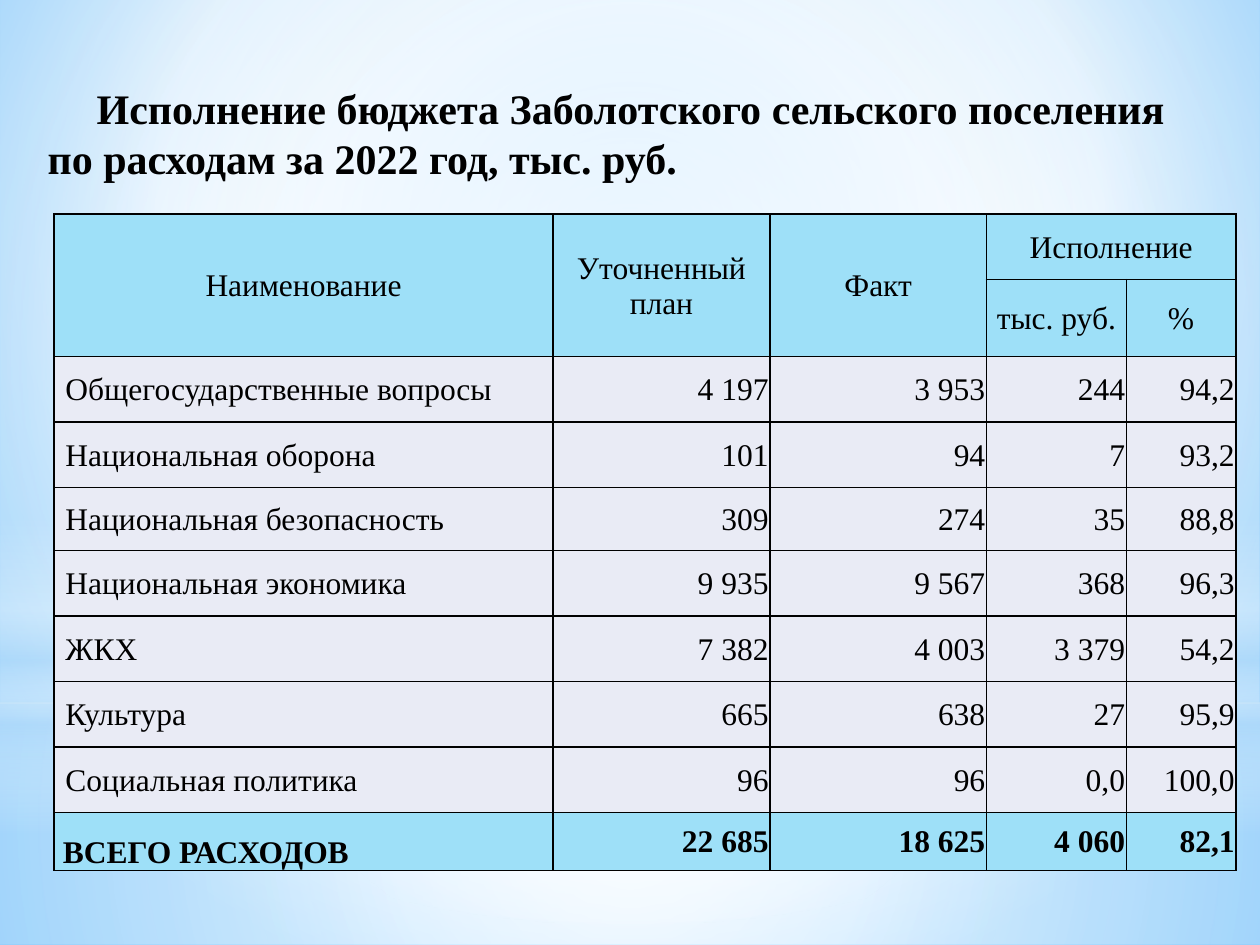
from dataclasses import dataclass

from pptx import Presentation
from pptx.dml.color import RGBColor
from pptx.enum.shapes import MSO_SHAPE
from pptx.enum.text import MSO_ANCHOR, PP_ALIGN
from pptx.oxml import parse_xml
from pptx.oxml.ns import nsdecls, qn
from pptx.util import Inches, Pt

RECT, OVAL = MSO_SHAPE.RECTANGLE, MSO_SHAPE.OVAL
LEFT, MID, RIGHT = PP_ALIGN.LEFT, PP_ALIGN.CENTER, PP_ALIGN.RIGHT
TOP, MIDDLE, BOTTOM = MSO_ANCHOR.TOP, MSO_ANCHOR.MIDDLE, MSO_ANCHOR.BOTTOM


@dataclass(frozen=True)
class Theme:
    font: str = "Times New Roman"
    ink: str = "000000"
    head: str = "9EE0F8"
    body: str = "E9EBF5"
    white: str = "FFFFFF"
    pale: str = "B4DCFA"
    sky: str = "9ED5FF"
    deep: str = "5BB9FF"
    title: int = 24
    cell: int = 18
    rule: int = 1


@dataclass(frozen=True)
class Stop:
    pos: int
    color: str
    alpha: int = 100


@dataclass(frozen=True)
class Glow:
    kind: int
    top: float
    height: float
    stops: tuple[Stop, ...]
    linear: bool = False


@dataclass(frozen=True)
class Style:
    fill: str
    align: int = RIGHT
    anchor: int = MIDDLE
    bold: bool = False
    indent: float = 0


T = Theme()
CENTER = (50, 50, 50, 50)
BACK = (Stop(0, T.sky), Stop(60, T.white), Stop(100, T.deep))
GLOWS = (
    Glow(RECT, 5.58, 1.92,
         (Stop(0, T.white, 91), Stop(37, T.white, 76), Stop(100, T.pale, 79))),
    Glow(RECT, 0, 5.58,
         (Stop(0, T.white, 89), Stop(48, T.white, 62), Stop(100, T.pale, 79))),
    Glow(RECT, 4.12, 2.5,
         (Stop(0, T.white, 0), Stop(29, T.white, 30), Stop(45, T.pale, 40),
          Stop(55, T.white, 26), Stop(65, T.pale, 60), Stop(100, T.white, 0)), True),
    Glow(OVAL, 1.75, 5.58, (Stop(0, T.white), Stop(56, T.white, 0))),
)

TITLE = (("Исполнение бюджета Заболотского сельского поселения", MID),
         ("по расходам за 2022 год, тыс. руб.", LEFT))
WIDTHS = (3.96, 1.72, 1.72, 1.11, 0.87)
HEIGHTS = (0.52, 0.44, 0.52, 0.52, 0.5, 0.52, 0.52, 0.52, 0.52, 0.46)
# Header cells: row, column, last row, last column, text
HEADS = (
    (0, 0, 1, 0, "Наименование"),
    (0, 1, 1, 1, "Уточненный план"),
    (0, 2, 1, 2, "Факт"),
    (0, 3, 0, 4, "Исполнение"),
    (1, 3, 1, 3, "тыс. руб."),
    (1, 4, 1, 4, "%"),
)
ROWS = (
    ("Общегосударственные вопросы", "4 197", "3 953", "244", "94,2"),
    ("Национальная оборона", "101", "94", "7", "93,2"),
    ("Национальная безопасность", "309", "274", "35", "88,8"),
    ("Национальная экономика", "9 935", "9 567", "368", "96,3"),
    ("ЖКХ", "7 382", "4 003", "3 379", "54,2"),
    ("Культура", "665", "638", "27", "95,9"),
    ("Социальная политика", "96", "96", "0,0", "100,0"),
    ("ВСЕГО РАСХОДОВ", "22 685", "18 625", "4 060", "82,1"),
)
HEAD = Style(T.head, MID)
NAME, VALUE = Style(T.body, LEFT, indent=0.08), Style(T.body)
SUM_NAME = Style(T.head, LEFT, BOTTOM, True, 0.06)
SUM = Style(T.head, bold=True)


def shade(fill, parent, stops: tuple[Stop, ...], focus=CENTER, linear=False) -> None:
    """Give the parent element a gradient fill with transparency."""
    fill.solid()
    marks = "".join(
        f'<a:gs pos="{s.pos * 1000}"><a:srgbClr val="{s.color}">'
        f'<a:alpha val="{s.alpha * 1000}"/></a:srgbClr></a:gs>' for s in stops)
    sides = " ".join(f'{k}="{v * 1000}"' for k, v in zip("ltrb", focus))
    way = ('<a:lin ang="5400000" scaled="0"/>' if linear else
           f'<a:path path="circle"><a:fillToRect {sides}/></a:path>')
    grad = parse_xml(f'<a:gradFill {nsdecls("a")} rotWithShape="1">'
                     f'<a:gsLst>{marks}</a:gsLst>{way}</a:gradFill>')
    parent.replace(parent.find(qn("a:solidFill")), grad)


def draw_glow(slide, glow: Glow) -> None:
    shape = slide.shapes.add_shape(
        glow.kind, 0, Inches(glow.top), Inches(10), Inches(glow.height))
    shape.shadow.inherit = False
    shape.line.fill.background()
    shade(shape.fill, shape._element.spPr, glow.stops, linear=glow.linear)


def set_font(para, size: int, bold: bool) -> None:
    for run in para.runs:
        font = run.font
        font.name, font.size, font.bold = T.font, Pt(size), bold
        font.color.rgb = RGBColor.from_string(T.ink)


def draw_title(slide) -> None:
    box = slide.shapes.add_textbox(Inches(0.28), Inches(0.6), Inches(9.45), Inches(0.71))
    frame = box.text_frame
    frame.word_wrap = True
    frame.vertical_anchor = TOP
    frame.text = "\n".join(text for text, _ in TITLE)
    for para, (_, align) in zip(frame.paragraphs, TITLE):
        para.alignment = align
        para.line_spacing = Pt(29)
        set_font(para, T.title, True)


def add_rules(cell) -> None:
    props = cell._tc.get_or_add_tcPr()
    for spot, side in enumerate(("lnL", "lnR", "lnT", "lnB")):
        props.insert(spot, parse_xml(
            f'<a:{side} {nsdecls("a")} w="{Pt(T.rule)}"><a:solidFill>'
            f'<a:srgbClr val="{T.ink}"/></a:solidFill></a:{side}>'))


def set_cell(cell, text: str, style: Style) -> None:
    cell.text_frame.text = text
    cell.vertical_anchor = style.anchor
    para = cell.text_frame.paragraphs[0]
    para.alignment = style.align
    if style.indent:
        props = para._p.get_or_add_pPr()
        props.set("marL", str(Inches(style.indent)))
        props.set("indent", "0")
    set_font(para, T.cell, style.bold)


def draw_table(slide) -> None:
    table = slide.shapes.add_table(
        len(HEIGHTS), len(WIDTHS), Inches(0.43), Inches(1.7),
        Inches(sum(WIDTHS)), Inches(sum(HEIGHTS))).table
    table.first_row = table.horz_banding = False
    for col, width in zip(table.columns, WIDTHS):
        col.width = Inches(width)
    for row, height in zip(table.rows, HEIGHTS):
        row.height = Inches(height)

    # Fill, margins and rules of the whole grid
    last = len(HEIGHTS) - 1
    for r, row in enumerate(table.rows):
        for cell in row.cells:
            cell.margin_left = cell.margin_right = cell.margin_top = Inches(0.01)
            cell.margin_bottom = 0
            cell.fill.solid()
            color = T.head if r in (0, 1, last) else T.body
            cell.fill.fore_color.rgb = RGBColor.from_string(color)
            add_rules(cell)

    # Header
    for top, left, low, right, text in HEADS:
        cell = table.cell(top, left)
        if (top, left) != (low, right):
            cell.merge(table.cell(low, right))
        set_cell(cell, text, HEAD)

    # Expenses and their total
    for r, texts in enumerate(ROWS, 2):
        name, value = (SUM_NAME, SUM) if r == last else (NAME, VALUE)
        for c, text in enumerate(texts):
            set_cell(table.cell(r, c), text, value if c else name)


def main() -> None:
    deck = Presentation()
    deck.slide_width, deck.slide_height = Inches(10), Inches(7.5)
    slide = deck.slides.add_slide(deck.slide_layouts[6])
    fill = slide.background.fill
    fill.solid()
    shade(fill, slide._element.cSld.bg.bgPr, BACK, (20, 10, 20, 60))
    for glow in GLOWS:
        draw_glow(slide, glow)
    draw_title(slide)
    draw_table(slide)
    deck.save("out.pptx")


if __name__ == "__main__":
    main()
